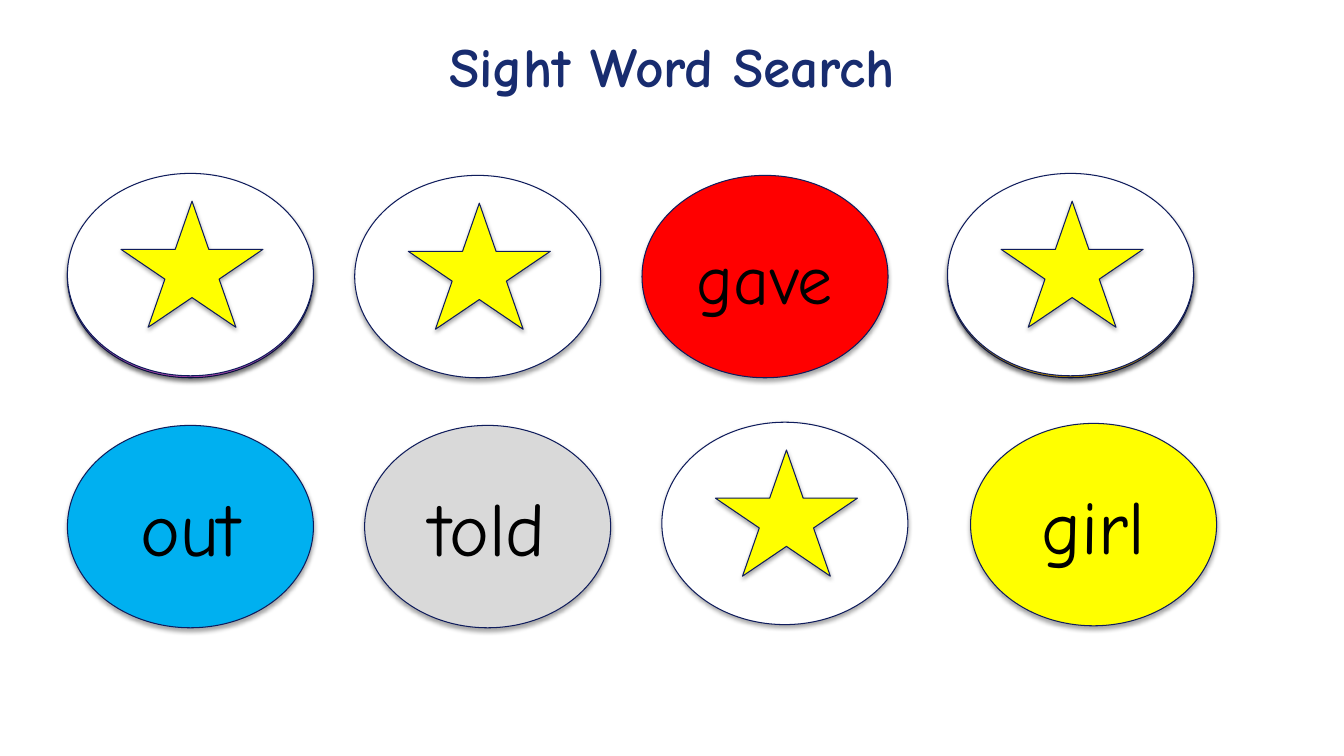
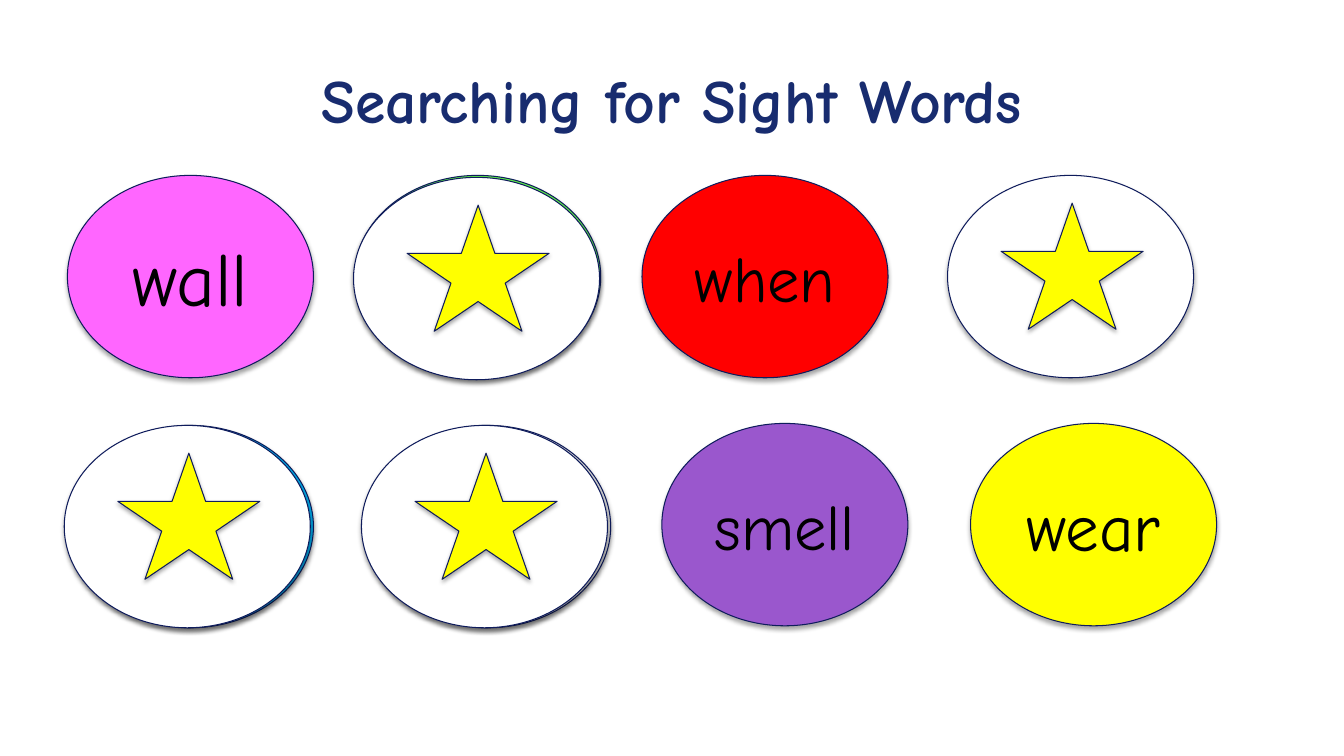
import pptx
import pptx.dml.color
import pptx.enum.shapes
import pptx.enum.text
import pptx.oxml
import pptx.oxml.ns
import pptx.util

Cm = pptx.util.Cm
Pt = pptx.util.Pt
Shapes = pptx.enum.shapes.MSO_SHAPE

SHADOW = (
    '<a:outerShdw %s blurRad="39370" dist="22860" dir="5400000" rotWithShape="0">'
    '<a:srgbClr val="000000"><a:alpha val="35000"/></a:srgbClr></a:outerShdw>'
) % pptx.oxml.ns.nsdecls("a")

SPOTS = [
    (1.7, 4.42), (8.94, 4.42), (16.18, 4.42), (23.88, 4.42),
    (1.7, 10.72), (9.19, 10.72), (16.68, 10.67), (24.46, 10.67),
]

PINK, GREEN, RED, ORANGE = "FF66FF", "62F44A", "FF0000", "FFC000"
BLUE, GREY, PURPLE, YELLOW = "00B0F0", "D9D9D9", "9A57CD", "FFFF00"

GAMES = [
    {
        "title": ("Sight Word Search", 39.6, 1.51),
        "ovals": {0: PINK, 2: RED, 3: ORANGE, 4: BLUE, 5: GREY, 7: YELLOW},
        "words": {2: ("gave", 50), 4: ("out", 54), 5: ("told", 54), 7: ("girl", 54)},
        "stars": {0: (0, -0.05), 1: (0, 0), 3: (0, -0.05), 6: (0, -0.03)},
    },
    {
        "title": ("Searching for Sight Words", 44, 2.35),
        "ovals": {0: PINK, 1: GREEN, 2: RED, 4: BLUE, 5: GREY, 6: PURPLE, 7: YELLOW},
        "words": {0: ("wall", 54), 2: ("when", 46), 6: ("smell", 46), 7: ("wear", 48)},
        "stars": {1: (-0.03, 0.05), 3: (0, 0), 4: (-0.08, 0), 5: (-0.08, 0)},
    },
]


def color(value):
    return pptx.dml.color.RGBColor.from_string(value)


class WordGame:
    """Draws word-search slides in one shared style."""

    font = "Comic Neue"
    title_color = "182C6F"
    word_color = "000000"
    line_color = "0F1C5C"
    oval_size = (6.2, 5.1)
    star_size = (3.58, 3.18)
    star_offset = (1.35, 0.7)

    def __init__(self):
        self.deck = pptx.Presentation()
        self.deck.slide_width = Cm(33.87)
        self.deck.slide_height = Cm(19.05)
        self.slide = None

    def add_slide(self):
        self.slide = self.deck.slides.add_slide(self.deck.slide_layouts[6])

    def label(self, box, text, size, value, bold=False):
        frame = box.text_frame
        frame.text = text
        frame.word_wrap = True
        frame.vertical_anchor = pptx.enum.text.MSO_ANCHOR.MIDDLE
        para = frame.paragraphs[0]
        para.alignment = pptx.enum.text.PP_ALIGN.CENTER
        span = para.runs[0]
        span.font.name = self.font
        span.font.size = Pt(size)
        span.font.bold = bold
        span.font.color.rgb = color(value)
        return para

    def title(self, text, size, middle):
        height = 2.2
        box = self.slide.shapes.add_textbox(
            Cm(1.7), Cm(middle - height / 2), Cm(30.48), Cm(height))
        box.text_frame.margin_top = box.text_frame.margin_bottom = 0
        para = self.label(box, text, size, self.title_color, bold=True)
        para.line_spacing = 1.15

    def shape(self, shapes, kind, position, size, fill):
        shape = shapes.add_shape(kind, *(Cm(length) for length in position + size))
        shape.fill.solid()
        shape.fill.fore_color.rgb = color(fill)
        shape.line.color.rgb = color(self.line_color)
        shape.line.width = Pt(0.75)
        shape.shadow.inherit = False
        effects = shape._element.spPr.find(pptx.oxml.ns.qn("a:effectLst"))
        effects.append(pptx.oxml.parse_xml(SHADOW))
        return shape

    def oval(self, position, fill, word=None):
        oval = self.shape(self.slide.shapes, Shapes.OVAL, position, self.oval_size, fill)
        if word:
            self.label(oval, *word, self.word_color)

    def star_card(self, position):
        shapes = self.slide.shapes.add_group_shape().shapes
        left, top = position
        across, down = self.star_offset
        self.shape(shapes, Shapes.OVAL, position, self.oval_size, "FFFFFF")
        self.shape(shapes, Shapes.STAR_5_POINT, (left + across, top + down),
                   self.star_size, YELLOW)


def main():
    game = WordGame()
    for content in GAMES:
        game.add_slide()
        game.title(*content["title"])
        for spot, fill in content["ovals"].items():
            game.oval(SPOTS[spot], fill, content["words"].get(spot))
        for spot, (across, down) in content["stars"].items():
            left, top = SPOTS[spot]
            game.star_card((left + across, top + down))
    game.deck.save("out.pptx")


if __name__ == "__main__":
    main()
